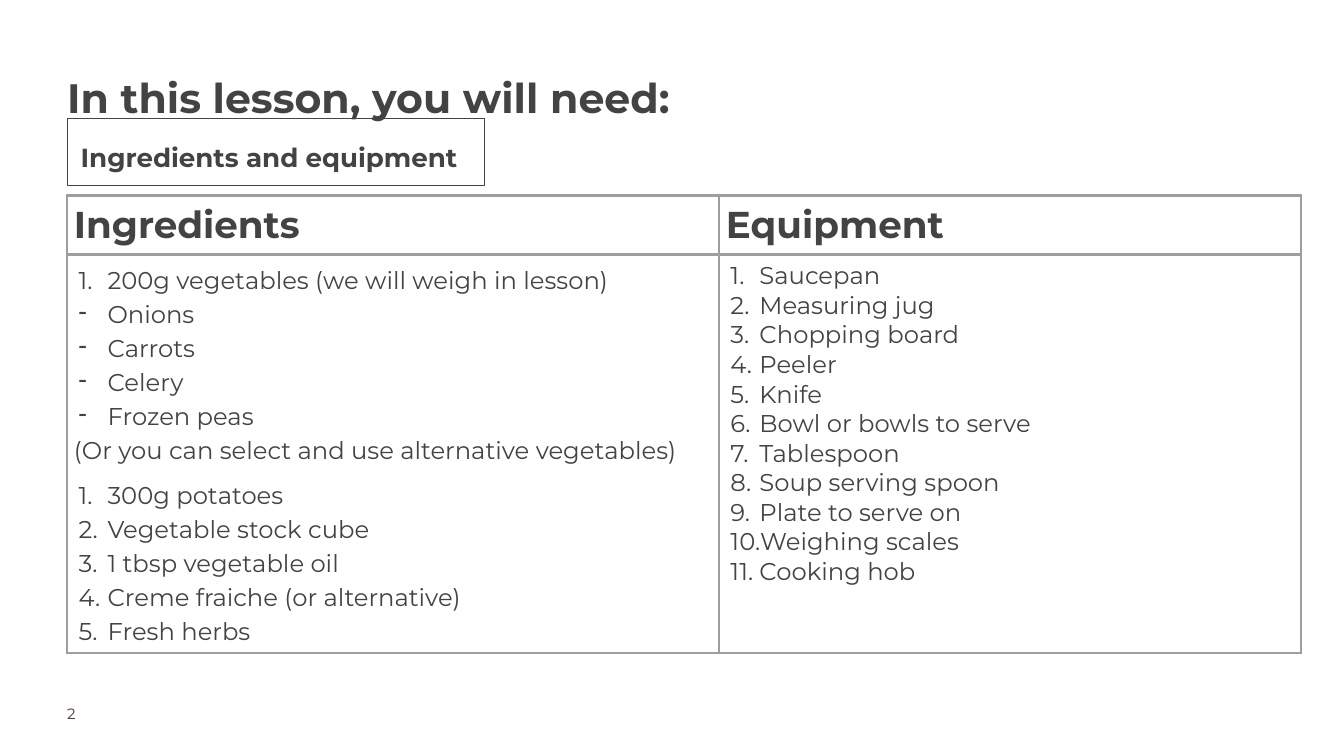
import pptx
import pptx.util
import pptx.dml.color
import pptx.enum.shapes
import pptx.enum.text
import pptx.oxml
import pptx.oxml.ns
from lxml import etree

Pt = pptx.util.Pt
INK = pptx.dml.color.RGBColor(0x43, 0x43, 0x43)
PLUM = pptx.dml.color.RGBColor(0x4B, 0x32, 0x41)
BORDER = pptx.dml.color.RGBColor(0x9E, 0x9E, 0x9E)
TOP = pptx.enum.text.MSO_ANCHOR.TOP
LEFT = pptx.enum.text.PP_ALIGN.LEFT

INGREDIENTS = [
    ("1.", "200g vegetables (we will weigh in lesson)"),
    ("-", "Onions"),
    ("-", "Carrots"),
    ("-", "Celery"),
    ("-", "Frozen peas"),
    (None, "(Or you can select and use alternative vegetables)"),
    ("1.", "300g potatoes"),
    ("1.", "Vegetable stock cube"),
    ("1.", "1 tbsp vegetable oil"),
    ("1.", "Creme fraiche (or alternative)"),
    ("1.", "Fresh herbs"),
]
EQUIPMENT = [("1.", name) for name in (
    "Saucepan", "Measuring jug", "Chopping board", "Peeler", "Knife",
    "Bowl or bowls to serve", "Tablespoon", "Soup serving spoon",
    "Plate to serve on", "Weighing scales", "Cooking hob")]


def write(frame, items, size, bold=False, color=INK, spacing=1.0, inset=0):
    """Fill a text frame with (marker, text) paragraphs."""
    settings = {"margin_left": Pt(inset), "margin_right": Pt(inset),
                "margin_top": Pt(inset), "margin_bottom": Pt(inset),
                "word_wrap": True, "vertical_anchor": TOP,
                "auto_size": pptx.enum.text.MSO_AUTO_SIZE.NONE}
    for name, value in settings.items():
        setattr(frame, name, value)
    previous = "1."
    for index, (marker, text) in enumerate(items):
        paragraph = frame.paragraphs[0] if index == 0 else frame.add_paragraph()
        if marker:
            properties = paragraph._p.get_or_add_pPr()
            properties.set("marL", str(Pt(36)))
            properties.set("indent", str(Pt(-31)))
            bullet_color = etree.SubElement(properties, pptx.oxml.ns.qn("a:buClr"))
            etree.SubElement(bullet_color, pptx.oxml.ns.qn("a:srgbClr"), val=str(color))
            if marker == "-":
                etree.SubElement(properties, pptx.oxml.ns.qn("a:buChar"), char="-")
            else:
                etree.SubElement(properties, pptx.oxml.ns.qn("a:buAutoNum"), type="arabicPeriod")
        paragraph.alignment = LEFT
        paragraph.line_spacing = spacing
        # A gap opens the list that follows an unmarked line
        paragraph.space_before = Pt(12 if previous is None else 0)
        previous = marker
        run = paragraph.add_run()
        run.text = text
        for name, value in {"name": "Montserrat", "size": Pt(size), "bold": bold}.items():
            setattr(run.font, name, value)
        run.font.color.rgb = color


def place(shape, left, top, width, height):
    for name, value in zip(("left", "top", "width", "height"), (left, top, width, height)):
        setattr(shape, name, Pt(value))


presentation = pptx.Presentation()
presentation.slide_width = Pt(1440)
presentation.slide_height = Pt(810)
slide = presentation.slides.add_slide(presentation.slide_layouts[5])

# Slide number
number_box = slide.shapes.add_textbox(Pt(72), Pt(754.5), Pt(113), Pt(28))
write(number_box.text_frame, [(None, "2")], 16, color=PLUM)

# Table: a header row, and lists that span the three rows below it
row_heights = (63, 91, 55, 281)
column_widths = (698.5, 623.5)
table_frame = slide.shapes.add_table(4, 2, Pt(72), Pt(209.5),
                                     Pt(sum(column_widths)), Pt(sum(row_heights)))
table = table_frame.table
table.first_row = False
table.horz_banding = False
for row, height in zip(table.rows, row_heights):
    row.height = Pt(height)
for column, width in zip(table.columns, column_widths):
    column.width = Pt(width)

# Cell borders
for cell in table.iter_cells():
    cell.fill.background()
    cell_properties = cell._tc.get_or_add_tcPr()
    for index, side in enumerate(("lnL", "lnR", "lnT", "lnB")):
        cell_properties.insert(index, pptx.oxml.parse_xml(
            f'<a:{side} {pptx.oxml.ns.nsdecls("a")} w="{Pt(3)}"><a:solidFill>'
            f'<a:srgbClr val="{BORDER}"/></a:solidFill></a:{side}>'))

# Cell text
columns = (("Ingredients", INGREDIENTS, 1.15), ("Equipment", EQUIPMENT, 1.0))
for index, (heading, items, spacing) in enumerate(columns):
    table.cell(1, index).merge(table.cell(3, index))
    for row_index, content, size, bold, line in (
            (0, [(None, heading)], 40, True, 1.0), (1, items, 26, False, spacing)):
        cell = table.cell(row_index, index)
        write(cell.text_frame, content, size, bold, spacing=line)
        for side in ("left", "right", "top", "bottom"):
            setattr(cell, f"margin_{side}", Pt(7.2))

# Title
title = slide.shapes.title
place(title, 72, 70, 1040, 128)
write(title.text_frame, [(None, "In this lesson, you will need:")], 44, True, spacing=1.15)

# Boxed subtitle
subtitle = slide.shapes.add_shape(pptx.enum.shapes.MSO_SHAPE.RECTANGLE,
                                  Pt(72), Pt(127), Pt(447), Pt(71.5))
subtitle.shadow.inherit = False
subtitle.fill.background()
subtitle.line.color.rgb = INK
subtitle.line.width = Pt(0.75)
write(subtitle.text_frame, [(None, "Ingredients and equipment")], 28, True,
      spacing=1.3, inset=14.4)

presentation.save("out.pptx")
